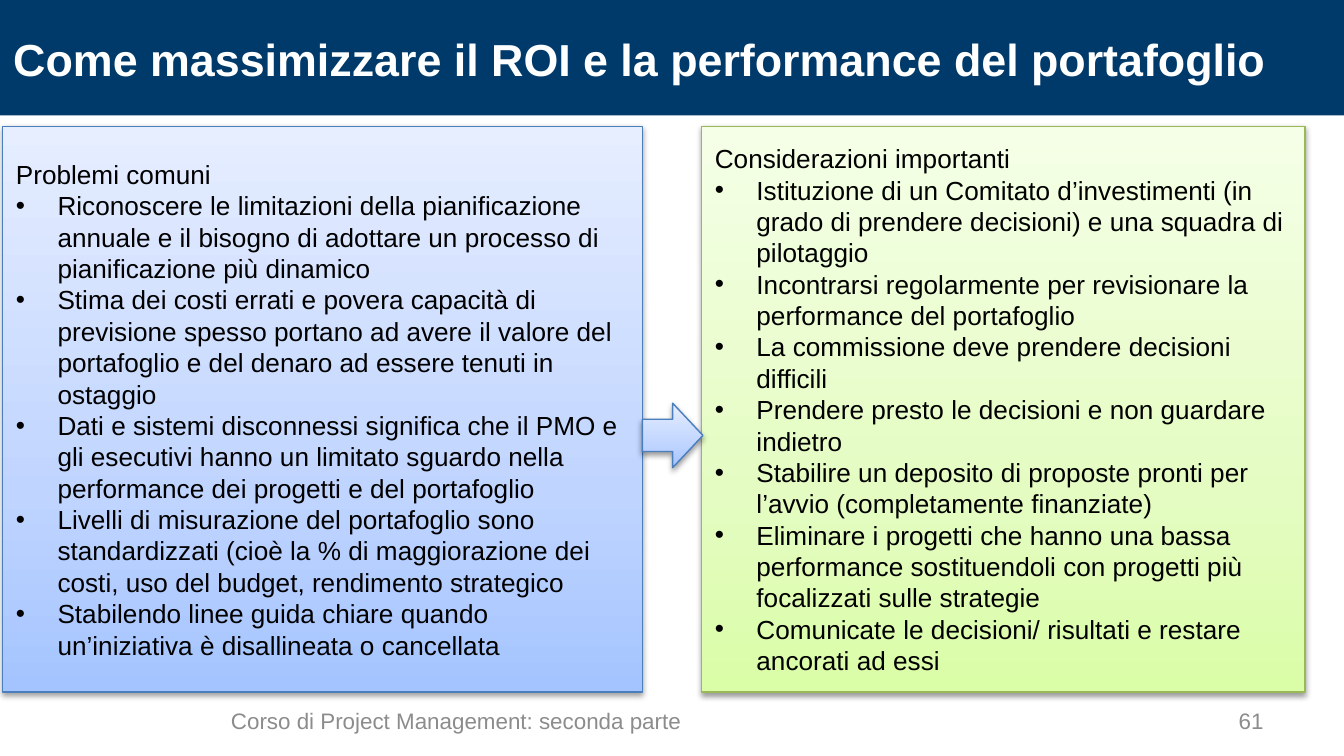
import pptx
import pptx.util
import pptx.dml.color
import pptx.enum.shapes
import pptx.enum.text
import pptx.oxml.ns
from lxml import etree

Inches = pptx.util.Inches
Pt = pptx.util.Pt
qn = pptx.oxml.ns.qn
MSO_SHAPE = pptx.enum.shapes.MSO_SHAPE
ANCHOR = pptx.enum.text.MSO_ANCHOR
ALIGN = pptx.enum.text.PP_ALIGN

FONT = "Arial"
COLORS = {"navy": "003A6A", "white": "FFFFFF", "black": "000000", "grey": "8C8C8C",
          "blue_line": "4B7EBC", "green_line": "98B955"}
# Gradient stops from bottom to top
GRADIENTS = {
    "blue": [(0, "A4C4FF"), (35, "BFD4FF"), (100, "E6EEFF")],
    "green": [(0, "DAFDA7"), (35, "E4FCC2"), (100, "F5FFE7")],
}
PROBLEMS = [
    "Riconoscere le limitazioni della pianificazione annuale e il bisogno di adottare "
    "un processo di pianificazione più dinamico",
    "Stima dei costi errati e povera capacità di previsione spesso portano ad avere il "
    "valore del portafoglio e del denaro ad essere tenuti in ostaggio",
    "Dati e sistemi disconnessi significa che il PMO e gli esecutivi hanno un limitato "
    "sguardo nella performance dei progetti e del portafoglio",
    "Livelli di misurazione del portafoglio sono standardizzati (cioè la % di "
    "maggiorazione dei costi, uso del budget, rendimento strategico",
    "Stabilendo linee guida chiare quando un’iniziativa è disallineata o cancellata",
]
CONSIDERATIONS = [
    "Istituzione di un Comitato d’investimenti (in grado di prendere decisioni) e una "
    "squadra di pilotaggio",
    "Incontrarsi regolarmente per revisionare la performance del portafoglio",
    "La commissione deve prendere decisioni difficili",
    "Prendere presto le decisioni e non guardare indietro",
    "Stabilire un deposito di proposte pronti per l’avvio (completamente finanziate)",
    "Eliminare i progetti che hanno una bassa performance sostituendoli con progetti "
    "più focalizzati sulle strategie",
    "Comunicate le decisioni/ risultati e restare ancorati ad essi",
]


def rgb(name):
    return pptx.dml.color.RGBColor.from_string(COLORS[name])


def add_element(parent, tag, **attributes):
    return etree.SubElement(parent, qn(tag), {k: str(v) for k, v in attributes.items()})


def add_run(paragraph, text, size, color, bold=False):
    run = paragraph.add_run()
    run.text = text
    run.font.name = FONT
    run.font.size = Pt(size)
    run.font.bold = bold
    run.font.color.rgb = rgb(color)


def add_label(slide, box, text, size, color, bold=False, align=ALIGN.LEFT, anchor=ANCHOR.MIDDLE):
    frame = slide.shapes.add_textbox(*map(Inches, box)).text_frame
    frame.word_wrap = True
    frame.vertical_anchor = anchor
    frame.paragraphs[0].alignment = align
    add_run(frame.paragraphs[0], text, size, color, bold)


def add_gradient_shape(slide, kind, box, theme):
    shape = slide.shapes.add_shape(kind, *map(Inches, box))
    shape.line.color.rgb = rgb(theme + "_line")
    shape.line.width = Pt(0.75)

    # Three-stop vertical gradient
    shape.fill.gradient()
    gradient = shape._element.spPr.find(qn("a:gradFill"))
    for child in list(gradient):
        gradient.remove(child)
    stops = add_element(gradient, "a:gsLst")
    for position, color in GRADIENTS[theme]:
        stop = add_element(stops, "a:gs", pos=position * 1000)
        add_element(stop, "a:srgbClr", val=color)
    add_element(gradient, "a:lin", ang=270 * 60000, scaled=0)

    # Soft shadow straight below
    shape.shadow.inherit = False
    effects = shape._element.spPr.find(qn("a:effectLst"))
    shadow = add_element(effects, "a:outerShdw", blurRad=Pt(3.1), dist=Pt(1.6),
                         dir=90 * 60000, rotWithShape=0)
    color = add_element(shadow, "a:srgbClr", val=COLORS["black"])
    add_element(color, "a:alpha", val=38000)
    return shape


def add_panel(slide, box, theme, heading, items):
    frame = add_gradient_shape(slide, MSO_SHAPE.RECTANGLE, box, theme).text_frame
    frame.word_wrap = True
    frame.vertical_anchor = ANCHOR.MIDDLE
    frame.paragraphs[0].alignment = ALIGN.LEFT
    add_run(frame.paragraphs[0], heading, 14, "black")
    for item in items:
        paragraph = frame.add_paragraph()
        paragraph.alignment = ALIGN.LEFT
        properties = paragraph._p.get_or_add_pPr()
        properties.set("marL", str(Inches(0.31)))
        properties.set("indent", str(-Inches(0.31)))
        add_element(properties, "a:buFont", typeface=FONT)
        add_element(properties, "a:buChar", char="•")
        add_run(paragraph, item, 14, "black")


def main():
    presentation = pptx.Presentation()
    presentation.slide_width = Inches(10)
    presentation.slide_height = Inches(10) * 9 // 16
    slide = presentation.slides.add_slide(presentation.slide_layouts[6])

    # Title band
    band = slide.shapes.add_shape(MSO_SHAPE.RECTANGLE, 0, 0, Inches(10), Inches(0.86))
    band.fill.solid()
    band.fill.fore_color.rgb = rgb("navy")
    band.line.fill.background()
    band.shadow.inherit = False
    add_label(slide, (0, 0.19, 9.89, 0.5),
              "Come massimizzare il ROI e la performance del portafoglio",
              24, "white", bold=True, anchor=ANCHOR.TOP)

    # Problems lead to considerations
    add_panel(slide, (0.02, 0.94, 4.76, 4.21), "blue", "Problemi comuni", PROBLEMS)
    add_panel(slide, (5.22, 0.94, 4.49, 4.21), "green", "Considerazioni importanti",
              CONSIDERATIONS)
    add_gradient_shape(slide, MSO_SHAPE.RIGHT_ARROW, (4.78, 3, 0.45, 0.48), "blue")

    # Footer
    add_label(slide, (1.62, 5.21, 7.22, 0.3), "Corso di Project Management: seconda parte",
              12, "grey")
    add_label(slide, (8.9, 5.21, 0.6, 0.3), "61", 12, "grey", align=ALIGN.RIGHT)

    presentation.save("out.pptx")


if __name__ == "__main__":
    main()
